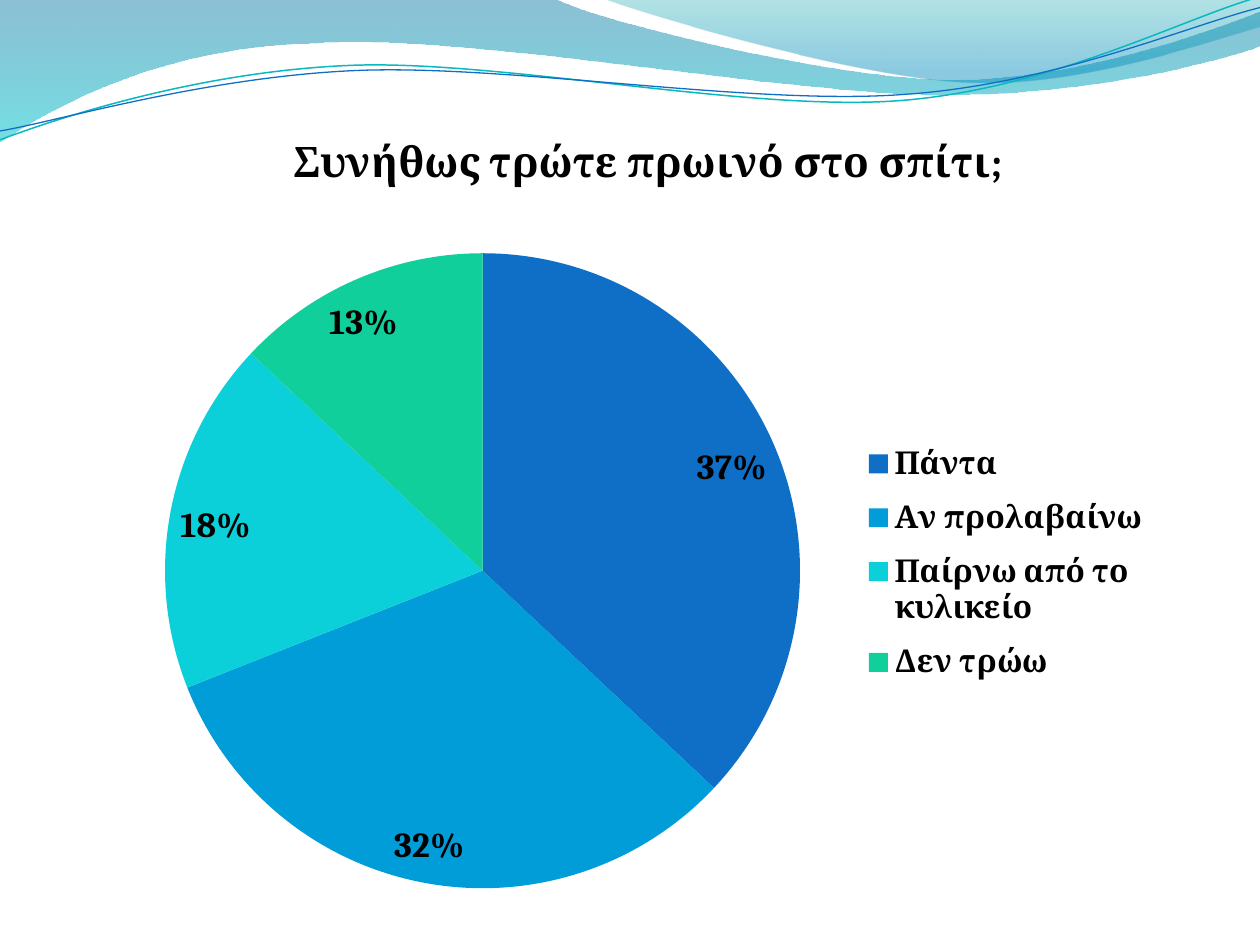
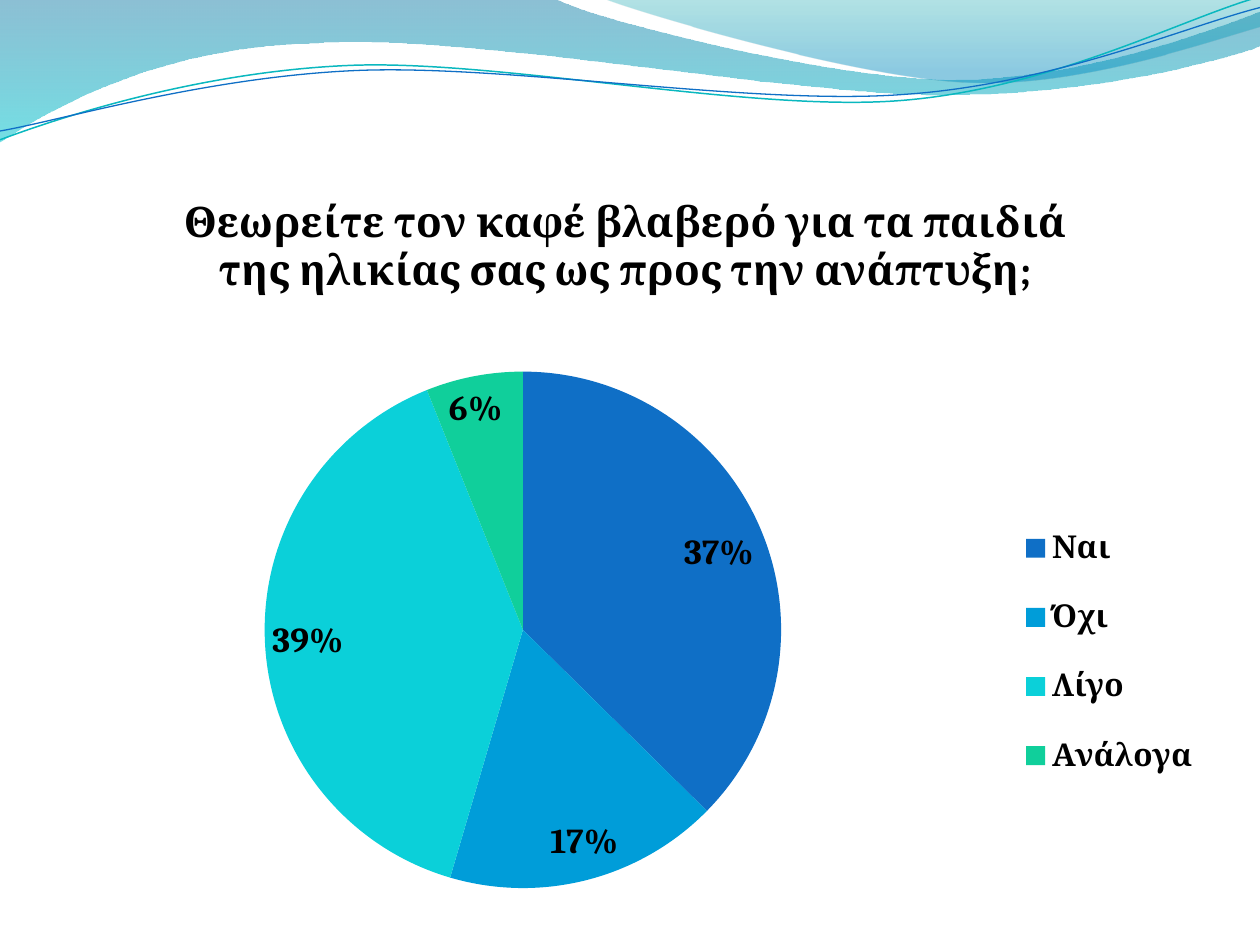
from lxml.etree import SubElement as Sub
from pptx import Presentation
from pptx.chart.data import CategoryChartData as Data
from pptx.dml.color import RGBColor as Rgb
from pptx.enum.chart import XL_CHART_TYPE as Kind
from pptx.enum.chart import XL_LABEL_POSITION as Spot
from pptx.enum.chart import XL_LEGEND_POSITION as Side
from pptx.oxml.ns import qn
from pptx.util import Inches, Pt

HUES = {
    "ink": "000000", "navy": "0F6FC6", "blue": "009DD9",
    "aqua": "0BD0D9", "mint": "10CF9B", "line": "0AB8BF",
    "deep": "0074A1", "cyan": "00C6CF", "teal": "00A1A9", "sky": "008BBF",
}
SLICES = ("navy", "blue", "aqua", "mint")
FONT = "Cambria"

# Wave outlines: two numbers make a straight step, six make a curve
BAND = [(0, 0), (4.4, -0.01), (4.76, 0.17, 6.64, 0.63, 7.58, 0.63),
        (8.53, 0.63, 9.58, 0.26, 10, 0.09), (10.01, 0.36),
        (9.83, 0.44, 8.7, 0.76, 7.46, 0.75),
        (6.22, 0.75, 3.82, 0.28, 2.57, 0.34),
        (1.29, 0.36, 0.46, 0.83, -0.01, 1.13)]
CREST = [(4.79, -0.01), (5.09, 0.11, 6.82, 0.62, 7.69, 0.65),
         (8.56, 0.69, 9.61, 0.32, 10, 0.21), (10, 0)]
UPPER = [(0, 1.11), (0.48, 0.93, 1.58, 0.57, 2.77, 0.52),
         (3.95, 0.47, 5.93, 0.89, 7.13, 0.8),
         (8.33, 0.71, 9.38, 0.15, 9.98, -0.02)]
LOWER = [(0, 1.04), (0.47, 0.96, 1.64, 0.61, 2.83, 0.56),
         (4.03, 0.51, 5.97, 0.84, 7.17, 0.75),
         (8.36, 0.67, 9.41, 0.21, 10, 0.06)]


def bend(shape, steps):
    """Join each three straight steps that stand for a curve."""
    lines = iter(list(shape.element.iter(qn("a:lnTo"))))
    for step in steps[1:]:
        first = next(lines)
        if len(step) == 6:
            first.tag_name = None
            curve = first.makeelement(qn("a:cubicBezTo"), {})
            first.addprevious(curve)
            for line in (first, next(lines), next(lines)):
                curve.append(line[0])
                line.getparent().remove(line)


def paint(font, size=18, bold=True, color="ink"):
    font.name, font.size, font.bold = FONT, Pt(size), bold
    font.color.rgb = Rgb.from_string(HUES[color])


def write(frame, text, **style):
    run = frame.paragraphs[0].add_run()
    run.text = text
    paint(run.font, **style)


def layout(node, index, shares, mode=True, inner=False):
    """Give a chart part a manual layout in shares of the chart."""
    for old in node.findall(qn("c:layout")):
        node.remove(old)
    part = node.makeelement(qn("c:layout"), {})
    node.insert(index, part)
    man = Sub(part, qn("c:manualLayout"))
    if inner:
        Sub(man, qn("c:layoutTarget")).set("val", "inner")
    if mode:
        for axis in "xy":
            Sub(man, qn(f"c:{axis}Mode")).set("val", "edge")
    for name, share in zip("xywh", shares):
        Sub(man, qn(f"c:{name}")).set("val", f"{share:.4f}")


def place(node, frame, box, inner=False):
    """Fix a chart part at a box given in slide inches."""
    left, top, wide, high = frame
    shares = ((box[0] - left) / wide, (box[1] - top) / high,
              *(size / full for size, full in zip(box[2:], (wide, high))))
    layout(node, 0 if inner else 1, shares, inner=inner)


class Deck:
    def __init__(self):
        self.prs = Presentation()
        self.prs.slide_width, self.prs.slide_height = Inches(10), Inches(7.5)
        self.blank = self.prs.slide_layouts[6]
        self.slide = None

    def page(self):
        self.slide = self.prs.slides.add_slide(self.blank)

    def waves(self):
        """Draw the waves once and hand them to the blank layout."""
        drawn = [self.band(BAND, ("deep", 0, 45), ("cyan", 1, 55)),
                 self.band(CREST, ("teal", 0, 30), ("sky", 0.8, 45)),
                 self.curve(UPPER, "line", 0.85),
                 self.curve(LOWER, "navy", 0.75)]
        tree = self.blank.element.cSld.spTree
        for i, shape in enumerate(drawn):
            shape.element.nvSpPr.cNvPr.set("id", str(20 + i))
            tree.append(shape.element)

    def outline(self, steps, close):
        dots = [(Inches(x), Inches(y)) for step in steps
                for x, y in zip(step[::2], step[1::2])]
        pen = self.slide.shapes.build_freeform(*dots[0])
        pen.add_line_segments(dots[1:], close=close)
        shape = pen.convert_to_shape()
        shape.shadow.inherit = False
        bend(shape, steps)
        return shape

    def band(self, steps, *stops):
        shape = self.outline(steps, True)
        shape.line.fill.background()
        shape.fill.gradient()
        shape.fill.gradient_angle = 270
        for stop, (hue, spot, _) in zip(shape.fill.gradient_stops, stops):
            stop.color.rgb = Rgb.from_string(HUES[hue])
            stop.position = spot
        tints = shape.element.spPr.iter(qn("a:srgbClr"))
        for tint, (_, _, alpha) in zip(tints, stops):
            Sub(tint, qn("a:alpha")).set("val", str(alpha * 1000))
        return shape

    def curve(self, steps, hue, width):
        shape = self.outline(steps, False)
        shape.fill.background()
        shape.line.color.rgb = Rgb.from_string(HUES[hue])
        shape.line.width = Pt(width)
        return shape

    def pie(self, title, shares, frame, head, disc, key, shifts):
        data = Data(number_format="0%")
        data.categories = list(shares)
        data.add_series(title, list(shares.values()))
        chart = self.slide.shapes.add_chart(
            Kind.PIE, *map(Inches, frame), data).chart
        paint(chart.font, size=10, bold=False)
        root = chart.element.find(qn("c:chart"))

        # Title and legend
        chart.has_title = True
        write(chart.chart_title.text_frame, title, size=24)
        chart.has_legend = True
        chart.legend.position = Side.RIGHT
        chart.legend.include_in_layout = False
        paint(chart.legend.font)

        # Slices and labels
        plot = chart.plots[0]
        plot.vary_by_categories = True
        series = plot.series[0]
        labels = series.data_labels
        labels.show_value = True
        labels.number_format, labels.number_format_is_linked = "0%", False
        labels.position = Spot.INSIDE_END
        paint(labels.font, size=20)
        for i, hue in enumerate(SLICES):
            point = series.points[i]
            point.format.fill.solid()
            point.format.fill.fore_color.rgb = Rgb.from_string(HUES[hue])
            if i in shifts:
                point.data_label.position = Spot.INSIDE_END
                paint(point.data_label.font, size=20)
        for lead in root.iter(qn("c:showLeaderLines")):
            lead.set("val", "0")

        # Labels moved from their usual spot, in inches
        for label, (x, y) in zip(root.iter(qn("c:dLbl")), shifts.values()):
            layout(label, 1, (x / frame[2], y / frame[3]), mode=False)
            form = label.makeelement(
                qn("c:numFmt"), {"formatCode": "0%", "sourceLinked": "0"})
            label.insert(2, form)

        # Positions
        place(root.find(qn("c:title")), frame, head)
        place(root.find(qn("c:legend")), frame, key)
        place(root.find(qn("c:plotArea")), frame, disc, inner=True)


def main():
    deck = Deck()

    # Breakfast at home
    deck.page()
    deck.waves()
    deck.pie("Συνήθως τρώτε πρωινό στο σπίτι;",
             {"Πάντα": 0.37, "Αν προλαβαίνω": 0.32,
              "Παίρνω από το κυλικείο": 0.18, "Δεν τρώω": 0.13},
             frame=(0.47, 0.84, 9.14, 6.35), head=(2.27, 1.01),
             disc=(1.31, 2.01, 5.04, 5.04), key=(6.73, 3.4, 2.5, 2.14),
             shifts={1: (-0.24, -0.07), 2: (0.02, -0.05), 3: (-0.24, 0.13)})

    # Coffee and growth
    deck.page()
    deck.pie("Θεωρείτε τον καφέ βλαβερό για τα παιδιά "
             "της ηλικίας σας ως προς την ανάπτυξη;",
             {"Ναι": 0.37, "Όχι": 0.17, "Λίγο": 0.39, "Ανάλογα": 0.06},
             frame=(0.23, 1.31, 9.45, 5.88), head=(1.4, 1.48),
             disc=(2.1, 2.95, 4.1, 4.1), key=(8.03, 3.95, 1.55, 2.45),
             shifts={1: (0.26, -0.08), 3: (-0.21, 0.04)})

    deck.prs.save("out.pptx")


if __name__ == "__main__":
    main()
